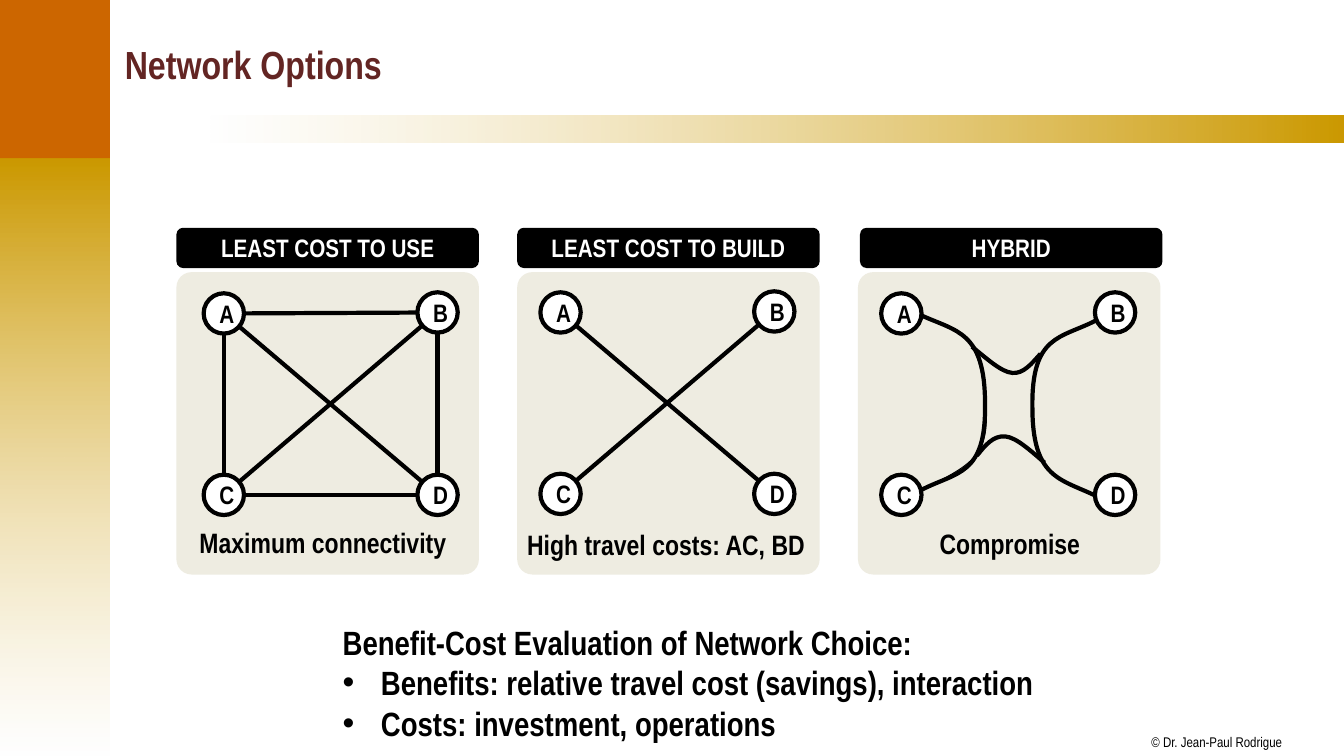
import math
from dataclasses import dataclass
from itertools import combinations

from lxml import etree
from pptx import Presentation
from pptx.dml import color
from pptx.enum import shapes, text
from pptx.oxml import ns
from pptx import util as u

Point = tuple[float, float]
Box = tuple[float, float, float, float]
SHAPE = shapes.MSO_SHAPE


@dataclass(frozen=True)
class Theme:
    font: str = "Arial Narrow"
    ink: str = "000000"
    white: str = "FFFFFF"
    title: str = "632523"
    gold: str = "CC9900"
    orange: str = "CC6600"
    panel: str = "EEECE1"
    title_pt: int = 28
    body_pt: int = 24
    caption_pt: int = 20
    label_pt: int = 18
    credit_pt: int = 10
    link_pt: float = 3
    hairline_pt: float = 0.75


@dataclass(frozen=True)
class Curve:
    points: tuple[Point, ...]  # start, then two controls and an end per segment
    width_pt: float


@dataclass(frozen=True)
class Option:
    heading: str
    heading_left: float
    panel_left: float
    nodes_at: Point
    links: tuple[str, ...]
    caption: str
    caption_box: Box
    curves: tuple[Curve, ...] = ()


THEME = Theme()
NODE_SIZE = 0.4
NODE_OFFSETS = {"A": (0, 0.01), "B": (2.12, 0), "C": (0, 1.81), "D": (2.12, 1.81)}
UNITS_PER_INCH = 100  # grid on which curve points are placed

HYBRID_CURVES = (
    Curve(((9.26, 3.18), (9.43, 3.25), (9.59, 3.32), (9.68, 3.51), (9.76, 3.71),
           (9.82, 4.14), (9.76, 4.35), (9.71, 4.56), (9.52, 4.66), (9.34, 4.76)),
          THEME.hairline_pt),
    Curve(((9.14, 3.13), (9.49, 3.29), (9.77, 3.29), (9.77, 4.01),
           (9.78, 4.72), (9.49, 4.68), (9.14, 4.86)), THEME.link_pt),
    Curve(((10.87, 4.92), (10.52, 4.75), (10.24, 4.75), (10.24, 4.04),
           (10.23, 3.32), (10.52, 3.36), (10.87, 3.18)), THEME.link_pt),
    Curve(((9.69, 4.52), (9.77, 4.42), (9.85, 4.32), (9.97, 4.33),
           (10.08, 4.34), (10.22, 4.47), (10.36, 4.59)), THEME.link_pt),
    Curve(((10.32, 3.51), (10.23, 3.61), (10.15, 3.71), (10.04, 3.7),
           (9.93, 3.69), (9.79, 3.56), (9.64, 3.44)), THEME.link_pt),
)
ALL_PAIRS = tuple("".join(pair) for pair in combinations("ABCD", 2))
OPTIONS = (
    Option("LEAST COST TO USE", 1.75, 1.75, (2.02, 2.9), ALL_PAIRS,
           "Maximum connectivity", (1.88, 5.16, 2.79, 0.44)),
    Option("LEAST COST TO BUILD", 5.13, 5.13, (5.36, 2.89), ("AD", "BC"),
           "High travel costs: AC, BD", (5.13, 5.18, 3, 0.44)),
    Option("HYBRID", 8.53, 8.51, (8.74, 2.9), (),
           "Compromise", (9.22, 5.17, 1.62, 0.44), HYBRID_CURVES),
)


def inches(values: Box) -> list[u.Length]:
    return [u.Inches(value) for value in values]


def rgb(code: str) -> color.RGBColor:
    return color.RGBColor.from_string(code)


def add_run(paragraph, words: str, size: int, ink: str, bold: bool = True) -> None:
    run = paragraph.add_run()
    run.text = words
    run.font.name, run.font.size, run.font.bold = THEME.font, u.Pt(size), bold
    run.font.color.rgb = rgb(ink)


def add_block(slide, kind, box: Box, fill: str | None = None):
    block = slide.shapes.add_shape(kind, *inches(box))
    block.shadow.inherit = False
    block.line.fill.background()
    if fill:
        block.fill.solid()
        block.fill.fore_color.rgb = rgb(fill)
    return block


def add_fade(slide, box: Box, angle: int, stops: tuple[tuple[str, int], ...]) -> None:
    """Stops are (colour, opacity in percent), from start to end."""
    band = add_block(slide, SHAPE.RECTANGLE, box)
    band.fill.gradient()
    band.fill.gradient_angle = angle
    for position, (stop, (code, _)) in enumerate(zip(band.fill.gradient_stops, stops)):
        stop.position = position
        stop.color.rgb = rgb(code)
    tints = band._element.spPr.iter(ns.qn("a:srgbClr"))
    for tint, (_, opacity) in zip(tints, stops):
        if opacity < 100:
            etree.SubElement(tint, ns.qn("a:alpha"), val=str(opacity * 1000))


def add_label(block, words: str, ink: str) -> None:
    block.text_frame.vertical_anchor = text.MSO_ANCHOR.MIDDLE
    paragraph = block.text_frame.paragraphs[0]
    paragraph.alignment = text.PP_ALIGN.CENTER
    add_run(paragraph, words, THEME.label_pt, ink)


def add_text(slide, box: Box, words: str, size: int, ink: str = THEME.ink,
             bold: bool = True, wrap: bool = True):
    frame = slide.shapes.add_textbox(*inches(box)).text_frame
    frame.word_wrap = wrap
    add_run(frame.paragraphs[0], words, size, ink, bold)
    return frame


def add_bullet(frame, words: str) -> None:
    paragraph = frame.add_paragraph()
    properties = paragraph._p.get_or_add_pPr()
    indent = u.Inches(0.38)
    properties.set("marL", str(indent))
    properties.set("indent", str(-indent))
    etree.SubElement(properties, ns.qn("a:buFont"), typeface="Arial")
    etree.SubElement(properties, ns.qn("a:buChar"), char="•")
    add_run(paragraph, words, THEME.body_pt, THEME.ink)


def add_link(slide, start: Point, end: Point) -> None:
    """Join two node centres, stopping at the rim of each node."""
    reach = NODE_SIZE / 2 / math.dist(start, end)
    dx, dy = (end[0] - start[0]) * reach, (end[1] - start[1]) * reach
    link = slide.shapes.add_connector(
        shapes.MSO_CONNECTOR.STRAIGHT,
        *inches((start[0] + dx, start[1] + dy, end[0] - dx, end[1] - dy)))
    link.line.color.rgb = rgb(THEME.ink)
    link.line.width = u.Pt(THEME.link_pt)
    etree.SubElement(link._element.spPr, ns.qn("a:effectLst"))


def add_curve(slide, curve: Curve) -> None:
    start, *rest = [(round(x * UNITS_PER_INCH), round(y * UNITS_PER_INCH))
                    for x, y in curve.points]
    builder = slide.shapes.build_freeform(*start, scale=u.Inches(1) / UNITS_PER_INCH)
    builder.add_line_segments(rest, close=False)
    route = builder.convert_to_shape()
    # Turn every three straight steps into one Bézier segment
    steps = list(route._element.spPr.iter(ns.qn("a:lnTo")))
    for first in range(0, len(steps), 3):
        outline = steps[first].getparent()
        bezier = etree.SubElement(outline, ns.qn("a:cubicBezTo"))
        for step in steps[first:first + 3]:
            bezier.append(step[0])
            outline.remove(step)
    route.shadow.inherit = False
    route.fill.background()
    route.line.color.rgb = rgb(THEME.ink)
    route.line.width = u.Pt(curve.width_pt)


def add_option(slide, option: Option) -> None:
    panel = add_block(slide, SHAPE.ROUNDED_RECTANGLE, (option.panel_left, 2.7, 3, 3), THEME.panel)
    panel.adjustments[0] = 0.05
    heading = add_block(slide, SHAPE.ROUNDED_RECTANGLE,
                        (option.heading_left, 2.26, 3, 0.4), THEME.ink)
    add_label(heading, option.heading, THEME.white)

    # Nodes, links and curves
    centres: dict[str, Point] = {}
    for name, (dx, dy) in NODE_OFFSETS.items():
        left, top = option.nodes_at[0] + dx, option.nodes_at[1] + dy
        centres[name] = (left + NODE_SIZE / 2, top + NODE_SIZE / 2)
        node = add_block(slide, SHAPE.OVAL, (left, top, NODE_SIZE, NODE_SIZE), THEME.white)
        node.line.color.rgb = rgb(THEME.ink)
        node.line.width = u.Pt(THEME.link_pt)
        add_label(node, name, THEME.ink)
    for start, end in option.links:
        add_link(slide, centres[start], centres[end])
    for curve in option.curves:
        add_curve(slide, curve)
    add_text(slide, option.caption_box, option.caption, THEME.caption_pt)


def main() -> None:
    deck = Presentation()
    deck.slide_width, deck.slide_height = u.Inches(13.33), u.Inches(7.5)
    slide = deck.slides.add_slide(deck.slide_layouts[6])

    # Side and top bands, credit line
    add_fade(slide, (-0.02, 1.57, 1.11, 5.93), 270, ((THEME.gold, 100), (THEME.white, 51)))
    add_fade(slide, (2.09, 1.15, 11.25, 0.26), 0, ((THEME.white, 50), (THEME.gold, 100)))
    add_block(slide, SHAPE.RECTANGLE, (-0.02, -0.01, 1.11, 1.58), THEME.orange)
    credit = add_text(slide, (11.42, 7.28, 1.31, 0.17), "© Dr. Jean-Paul Rodrigue",
                      THEME.credit_pt, bold=False, wrap=False)
    credit.margin_left = credit.margin_right = credit.margin_top = credit.margin_bottom = 0

    # Title and the three network options
    title = add_text(slide, (1.14, 0.11, 11.97, 1.04), "Network Options",
                     THEME.title_pt, THEME.title)
    title.vertical_anchor = text.MSO_ANCHOR.MIDDLE
    for option in OPTIONS:
        add_option(slide, option)

    # Evaluation
    evaluation = add_text(slide, (3.3, 6.12, 7.12, 1.31),
                          "Benefit-Cost Evaluation of Network Choice:", THEME.body_pt, wrap=False)
    add_bullet(evaluation, "Benefits: relative travel cost (savings), interaction")
    add_bullet(evaluation, "Costs: investment, operations")
    deck.save("out.pptx")


if __name__ == "__main__":
    main()
